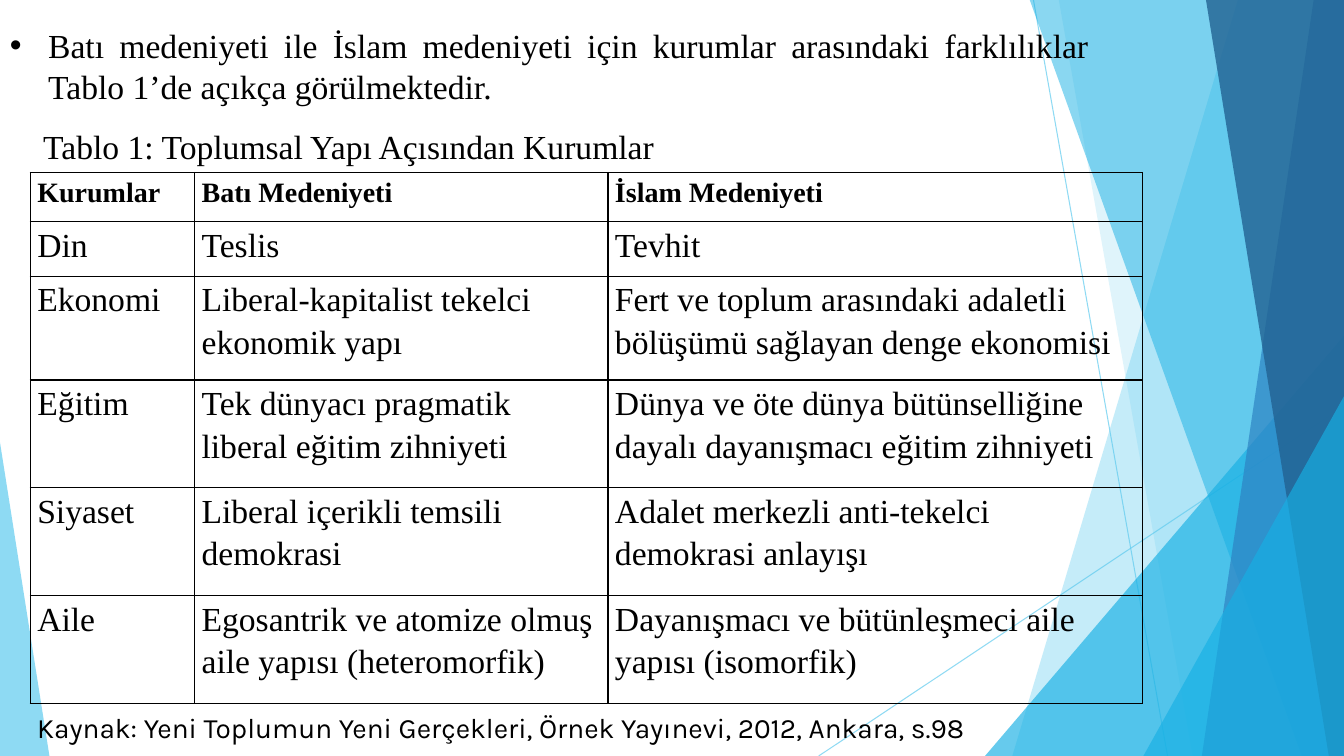
"""Builds a slide comparing the institutions of two civilisations in a table."""
from pptx import Presentation
from pptx.dml.color import RGBColor
from pptx.enum.shapes import MSO_CONNECTOR, MSO_SHAPE
from pptx.enum.text import MSO_AUTO_SIZE, PP_ALIGN
from pptx.oxml.ns import qn
from pptx.util import Pt
from lxml.etree import SubElement

PX = 9144
COLORS = {"black": "000000", "sky": "5FCBEF", "cyan": "17B0E4",
          "blue": "2E83C3", "navy": "226292"}
SERIF = "Times New Roman"


def set_alpha(shape, percent):
    for color in shape._element.spPr.iter(qn("a:srgbClr")):
        SubElement(color, qn("a:alpha"), val=str(percent * 1000))


def add_run(p, text, size, font=SERIF, bold=False):
    r = p.add_run()
    r.text = text
    r.font.size = Pt(size)
    r.font.name = font
    r.font.bold = bold
    r.font.color.rgb = RGBColor.from_string(COLORS["black"])


prs = Presentation()
prs.slide_width, prs.slide_height = 1333 * PX, 750 * PX
s = prs.slides.add_slide(prs.slide_layouts[6])

for ends in [(1025, 0, 1158, 750), (1333, 403, 812, 750)]:
    line = s.shapes.add_connector(MSO_CONNECTOR.STRAIGHT, *[v * PX for v in ends])
    line.line.color.rgb = RGBColor.from_string(COLORS["sky"])
    line.line.width = Pt(0.75)
    set_alpha(line, 70)
    SubElement(line._element.spPr, qn("a:effectLst"))

facets = [
    ("band", (1228, 1004), "sky", 36),
    ("band", (1050, 1183), "sky", 20),
    ("triangle", (977, 333, 356, 417, 1), "cyan", 66),
    ("band", (1021, 1291), "cyan", 50),
    ("band", (1303, 1192), "blue", 70),
    ("band", (1196, 1318), "navy", 80),
    ("triangle", (1134, 393, 199, 357, 1), "cyan", 66),
    ("triangle", (0, 439, 49, 311, 0), "sky", 70),
]
for kind, geometry, color, alpha in facets:
    if kind == "band":
        top_x, bottom_x = geometry
        outline = s.shapes.build_freeform(top_x, -1, scale=PX)
        outline.add_line_segments([(1333, -1), (1333, 750), (bottom_x, 750)])
        sp = outline.convert_to_shape()
    else:
        *box, apex = geometry
        sp = s.shapes.add_shape(MSO_SHAPE.ISOSCELES_TRIANGLE, *[v * PX for v in box])
        sp.adjustments[0] = apex
    sp.shadow.inherit = False
    sp.fill.solid()
    sp.fill.fore_color.rgb = RGBColor.from_string(COLORS[color])
    sp.line.fill.background()
    set_alpha(sp, alpha)

texts = [
    ((0, 20, 1090, 91), "Batı medeniyeti ile İslam medeniyeti için kurumlar arasındaki "
     "farklılıklar Tablo 1’de açıkça görülmektedir.", 24, SERIF, True),
    ((33, 120, 842, 50), "Tablo 1: Toplumsal Yapı Açısından Kurumlar", 24, SERIF, False),
    ((27, 700, 1132, 44), "Kaynak: Yeni Toplumun Yeni Gerçekleri, Örnek Yayınevi, "
     "2012, Ankara, s.98", 20, "Karla", False),
]
for box, text, size, font, bulleted in texts:
    tf = s.shapes.add_textbox(*[v * PX for v in box]).text_frame
    tf.word_wrap = True
    tf.auto_size = MSO_AUTO_SIZE.SHAPE_TO_FIT_TEXT
    p = tf.paragraphs[0]
    if bulleted:
        p.alignment = PP_ALIGN.JUSTIFY
        pPr = p._p.get_or_add_pPr()
        pPr.set("marL", str(38 * PX))
        pPr.set("indent", str(-38 * PX))
        SubElement(pPr, qn("a:buFont"), typeface="Arial")
        SubElement(pPr, qn("a:buChar"), char="•")
    add_run(p, text, size, font)

rows = [
    ("Kurumlar", "Batı Medeniyeti", "İslam Medeniyeti"),
    ("Din", "Teslis", "Tevhit"),
    ("Ekonomi", "Liberal-kapitalist tekelci ekonomik yapı",
     "Fert ve toplum arasındaki adaletli bölüşümü sağlayan denge ekonomisi"),
    ("Eğitim", "Tek dünyacı pragmatik liberal eğitim zihniyeti",
     "Dünya ve öte dünya bütünselliğine dayalı dayanışmacı eğitim zihniyeti"),
    ("Siyaset", "Liberal içerikli temsili demokrasi",
     "Adalet merkezli anti-tekelci demokrasi anlayışı"),
    ("Aile", "Egosantrik ve atomize olmuş aile yapısı (heteromorfik)",
     "Dayanışmacı ve bütünleşmeci aile yapısı (isomorfik)"),
]
col_widths = [163, 410, 530]
row_heights = [49, 54, 103, 107, 107, 107]
table = s.shapes.add_table(len(rows), len(col_widths), 30 * PX, 171 * PX,
                           sum(col_widths) * PX, sum(row_heights) * PX).table
table.horz_banding = False
for column, width in zip(table.columns, col_widths):
    column.width = width * PX
for i, (row, height) in enumerate(zip(rows, row_heights)):
    table.rows[i].height = height * PX
    for j, text in enumerate(row):
        cell = table.cell(i, j)
        cell.margin_left = cell.margin_right = 7 * PX
        cell.margin_top = cell.margin_bottom = 0
        tcPr = cell._tc.get_or_add_tcPr()
        for side in ("lnL", "lnR", "lnT", "lnB"):
            border = SubElement(tcPr, qn(f"a:{side}"), w=str(Pt(1)))
            fill = SubElement(border, qn("a:solidFill"))
            SubElement(fill, qn("a:srgbClr"), val=COLORS["black"])
        cell.fill.background()
        p = cell.text_frame.paragraphs[0]
        p.line_spacing = 1.15
        add_run(p, text, 20 if i == 0 else 24, bold=i == 0)

prs.save("out.pptx")
